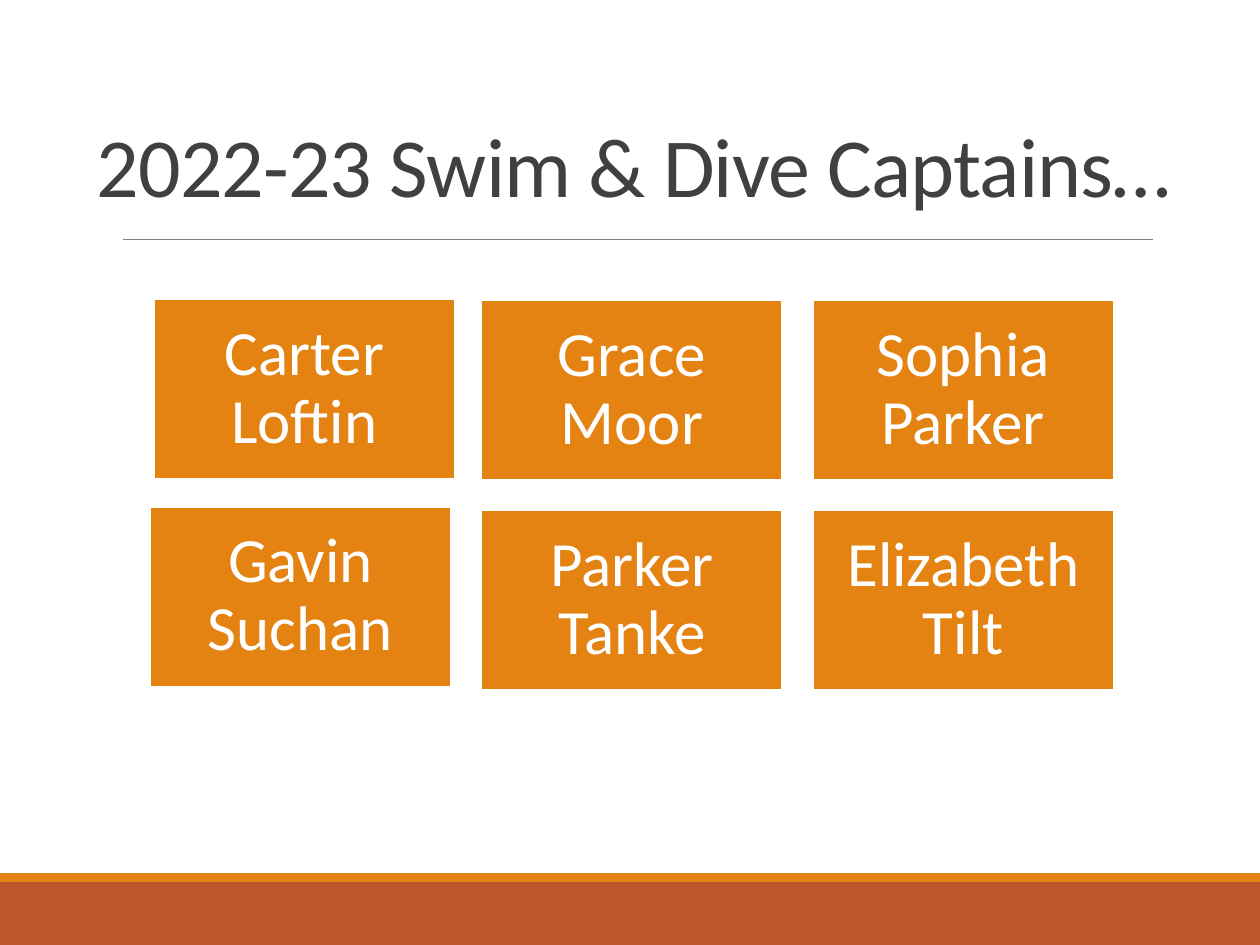
from typing import Any, NamedTuple

from pptx import Presentation
from pptx.dml.color import RGBColor
from pptx.enum.shapes import MSO_CONNECTOR as Connector, MSO_SHAPE as Shape
from pptx.enum.text import MSO_ANCHOR as Anchor, PP_ALIGN as Align
from pptx.oxml.ns import qn
from pptx.util import Inches, Pt

ORANGE = RGBColor(0xE4, 0x83, 0x12)
RUST = RGBColor(0xBD, 0x58, 0x2C)
GREY = RGBColor(0x80, 0x80, 0x80)
CHARCOAL = RGBColor(0x40, 0x40, 0x40)
WHITE = RGBColor(0xFF, 0xFF, 0xFF)

TILE_WIDTH, TILE_HEIGHT = 2.39, 1.43
TILE_FRAME = {
    "word_wrap": True,
    "vertical_anchor": Anchor.MIDDLE,
    "margin_left": Inches(0.15),
    "margin_right": Inches(0.15),
    "margin_top": Inches(0.15),
    "margin_bottom": Inches(0.15),
}
TILE_PARA = {"alignment": Align.CENTER, "line_spacing": 0.9}
TILE_FONT = {"name": "Calibri", "size": Pt(36)}
TITLE_FRAME = {"word_wrap": True, "vertical_anchor": Anchor.BOTTOM}
TITLE_PARA = {"alignment": Align.LEFT, "line_spacing": 0.85}
TITLE_FONT = {"name": "Calibri", "size": Pt(48)}


class Band(NamedTuple):
    top: float
    height: float
    color: RGBColor


class Captain(NamedTuple):
    name: str
    left: float
    top: float


BANDS = [Band(7, 0.5, RUST), Band(6.93, 0.07, ORANGE)]
CAPTAINS = [
    Captain("Carter Loftin", 1.22, 2.37),
    Captain("Grace Moor", 3.82, 2.38),
    Captain("Sophia Parker", 6.45, 2.38),
    Captain("Gavin Suchan", 1.19, 4.02),
    Captain("Parker Tanke", 3.82, 4.05),
    Captain("Elizabeth Tilt", 6.45, 4.05),
]


def apply(target: Any, values: dict[str, Any]) -> None:
    for name, value in values.items():
        setattr(target, name, value)


def write(box: Any, text: str, frame: dict, para: dict, font: dict, color: RGBColor) -> Any:
    apply(box.text_frame, frame)
    paragraph = box.text_frame.paragraphs[0]
    apply(paragraph, para)
    span = paragraph.add_run()
    span.text = text
    apply(span.font, font)
    span.font.color.rgb = color
    return span


def add_block(page: Any, left: float, top: float, width: float, height: float, color: RGBColor) -> Any:
    block = page.shapes.add_shape(
        Shape.RECTANGLE, Inches(left), Inches(top), Inches(width), Inches(height)
    )
    block.shadow.inherit = False
    block.fill.solid()
    block.fill.fore_color.rgb = color
    block.line.fill.background()
    return block


def add_title(page: Any, text: str) -> None:
    box = page.shapes.add_textbox(Inches(0.67), Inches(0.17), Inches(8.75), Inches(1.58))
    write(box, text, TITLE_FRAME, TITLE_PARA, TITLE_FONT, CHARCOAL)
    for properties in box.element.iter(qn("a:rPr")):
        properties.set("spc", "-50")


def add_rule(page: Any) -> None:
    rule = page.shapes.add_connector(
        Connector.STRAIGHT, Inches(0.98), Inches(1.9), Inches(9.15), Inches(1.9)
    )
    rule.line.color.rgb = GREY
    rule.line.width = Pt(0.5)
    properties = rule.element.spPr
    properties.append(properties.makeelement(qn("a:effectLst"), {}))


def add_captain(page: Any, captain: Captain) -> None:
    tile = add_block(page, captain.left, captain.top, TILE_WIDTH, TILE_HEIGHT, ORANGE)
    tile.line.color.rgb = WHITE
    tile.line.width = Pt(1.25)
    write(tile, captain.name, TILE_FRAME, TILE_PARA, TILE_FONT, WHITE)


def main() -> None:
    deck = Presentation()
    apply(deck, {"slide_width": Inches(10), "slide_height": Inches(7.5)})
    page = deck.slides.add_slide(deck.slide_layouts[6])
    for band in BANDS:
        add_block(page, 0, band.top, 10, band.height, band.color)
    add_rule(page)
    add_title(page, "2022-23 Swim & Dive Captains…")
    for captain in CAPTAINS:
        add_captain(page, captain)
    deck.save("out.pptx")


if __name__ == "__main__":
    main()
